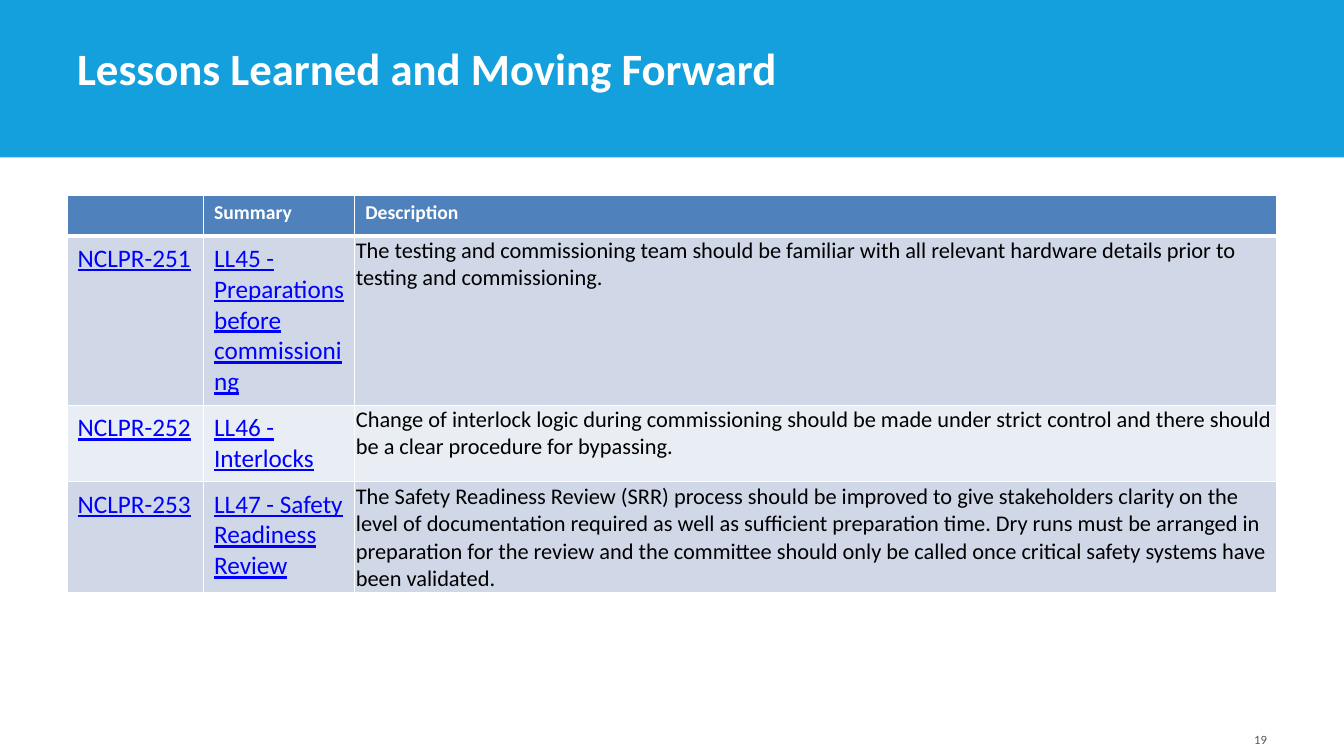
from lxml.etree import SubElement
from pptx import Presentation
from pptx.dml.color import RGBColor
from pptx.enum.shapes import MSO_SHAPE as Preset
from pptx.enum.text import MSO_ANCHOR as Anchor, PP_ALIGN as Align
from pptx.oxml.ns import qn
from pptx.util import Emu, Pt

FONT = "Calibri"
WHITE, BLACK, GREY = "FFFFFF", "000000", "595959"
BANNER_BLUE, HEADER_BLUE, LINK_BLUE = "13A0DD", "4F81BD", "0000FF"
BANDS = ["D0D8E8", "E9EDF4"]

COLUMN_WIDTHS = [130, 144, 878]
ROW_HEIGHTS = [39, 161, 73, 105]
# Cell margins: left, top, right, bottom
HEADER_MARGINS, LINK_MARGINS, BODY_MARGINS = (10, 5, 10, 5), (10, 7, 10, 7), (1, 1, 1, 0)

HEADINGS = ["", "Summary", "Description"]
LESSONS = [
    ("NCLPR-251", "LL45 - Preparations before commissioning",
     "The testing and commissioning team should be familiar with all relevant "
     "hardware details prior to testing and commissioning."),
    ("NCLPR-252", "LL46 - Interlocks",
     "Change of interlock logic during commissioning should be made under strict "
     "control and there should be a clear procedure for bypassing."),
    ("NCLPR-253", "LL47 - Safety Readiness Review",
     "The Safety Readiness Review (SRR) process should be improved to give "
     "stakeholders clarity on the level of documentation required as well as "
     "sufficient preparation time. Dry runs must be arranged in preparation for "
     "the review and the committee should only be called once critical safety "
     "systems have been validated."),
]


def px(length):
    return Emu(length * 9525)


def color(hex_code):
    return RGBColor.from_string(hex_code)


def write(frame, text, size, hex_code, bold=False, underline=False, align=Align.LEFT):
    frame.text = text
    paragraph = frame.paragraphs[0]
    paragraph.alignment = align
    font = paragraph.font
    if paragraph.runs:
        font = paragraph.runs[0].font
    font.name, font.size = FONT, Pt(size)
    font.bold, font.underline = bold, underline
    font.color.rgb = color(hex_code)


def add_banner(slide, width, height):
    banner = slide.shapes.add_shape(Preset.RECTANGLE, 0, 0, px(width), px(height))
    banner.shadow.inherit = False
    banner.fill.solid()
    banner.fill.fore_color.rgb = color(BANNER_BLUE)
    banner.line.fill.background()


def add_label(slide, box, text, size, hex_code, **style):
    frame = slide.shapes.add_textbox(*map(px, box)).text_frame
    frame.word_wrap = True
    frame.vertical_anchor = Anchor.BOTTOM
    write(frame, text, size, hex_code, **style)


def set_borders(cell, bottom, top):
    properties = cell._tc.get_or_add_tcPr()
    for side, points in (("L", 1), ("R", 1), ("T", top), ("B", bottom)):
        line = SubElement(properties, qn(f"a:ln{side}"), w=str(Pt(points)))
        fill = SubElement(line, qn("a:solidFill"))
        SubElement(fill, qn("a:srgbClr"), val=WHITE)


def fill_cell(cell, text, fill, margins, size, hex_code, top=1, bottom=1, **style):
    set_borders(cell, bottom, top)
    cell.fill.solid()
    cell.fill.fore_color.rgb = color(fill)
    cell.margin_left, cell.margin_top, cell.margin_right, cell.margin_bottom = map(px, margins)
    cell.vertical_anchor = Anchor.TOP
    write(cell.text_frame, text, size, hex_code, **style)


def add_lessons_table(slide, left, top):
    table = slide.shapes.add_table(
        len(ROW_HEIGHTS), len(COLUMN_WIDTHS), px(left), px(top),
        px(sum(COLUMN_WIDTHS)), px(sum(ROW_HEIGHTS))).table
    for column, width in zip(table.columns, COLUMN_WIDTHS):
        column.width = px(width)
    for row, height in zip(table.rows, ROW_HEIGHTS):
        row.height = px(height)

    # Header row
    for column, heading in enumerate(HEADINGS):
        fill_cell(table.cell(0, column), heading, HEADER_BLUE, HEADER_MARGINS,
                  14, WHITE, bottom=3, bold=True)

    # Lesson rows: two underlined references, then the description
    for row, lesson in enumerate(LESSONS, start=1):
        band = BANDS[(row - 1) % 2]
        top_border = 3 if row == 1 else 1
        for column, text in enumerate(lesson[:2]):
            fill_cell(table.cell(row, column), text, band, LINK_MARGINS,
                      18, LINK_BLUE, top=top_border, underline=True)
        fill_cell(table.cell(row, 2), lesson[2], band, BODY_MARGINS,
                  16, BLACK, top=top_border)


def main():
    deck = Presentation()
    deck.slide_width, deck.slide_height = px(1280), px(720)
    slide = deck.slides.add_slide(deck.slide_layouts[6])

    # Title banner
    add_banner(slide, 1280, 150)
    add_label(slide, (64, 36, 999, 59), "Lessons Learned and Moving Forward",
              32, WHITE, bold=True)

    # Lessons
    add_lessons_table(slide, 64, 186)

    # Page number
    add_label(slide, (918, 678, 298, 38), "19", 9, GREY, align=Align.RIGHT)

    deck.save("out.pptx")


if __name__ == "__main__":
    main()
